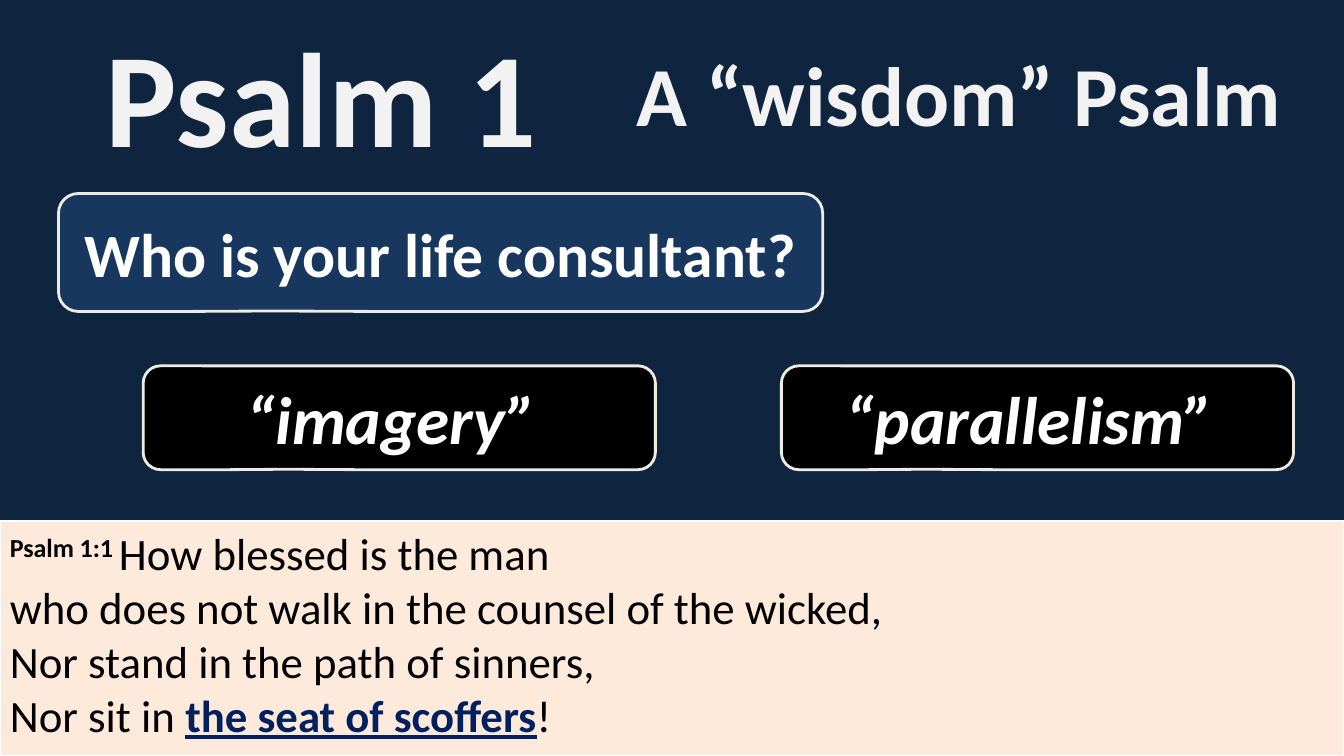
from pptx import Presentation
from pptx.dml.color import RGBColor
from pptx.enum.shapes import MSO_SHAPE as Shape
from pptx.enum.text import MSO_ANCHOR as Anchor, PP_ALIGN as Align
from pptx.util import Inches, Pt

NAVY = RGBColor(0x0F, 0x24, 0x3E)
BLUE = RGBColor(0x17, 0x37, 0x5E)
INK = RGBColor(0x00, 0x20, 0x60)
BLACK = RGBColor(0, 0, 0)
WHITE = RGBColor(0xFF, 0xFF, 0xFF)
PALE = RGBColor(0xF2, 0xF2, 0xF2)
CREAM = RGBColor(0xEE, 0xEC, 0xE1)
PEACH = RGBColor(0xFD, 0xEA, 0xDA)

# text, size, left, width
HEADS = [
    ("Psalm 1 ", 96, 0, 6.67),
    ("A “wisdom” Psalm", 60, 5.72, 7.58),
]
# text, size, italic, fill, box
CALLS = [
    ("Who is your life consultant?", 44, False, BLUE, (0.58, 1.92, 7.58, 1.17)),
    ("“parallelism” ", 48, True, BLACK, (7.75, 3.63, 5.08, 1.03)),
    ("“imagery” ", 48, True, BLACK, (1.42, 3.63, 5.08, 1.03)),
]
TAIL = (-0.219, 0.496, 0.167)
# paragraphs of lines of (text, style)
VERSE = [
    [[("Psalm 1:1 ", "ref"), ("How blessed is the man", "")]],
    [
        [("who does not walk in the counsel of the wicked,", "")],
        [("Nor stand in the path of sinners,", "")],
        [("Nor sit in ", ""), ("the seat of scoffers", "key"), ("!", "")],
    ],
]


def add_run(para, text, size, color, bold=False, italic=False):
    run = para.add_run()
    run.text = text
    font = run.font
    font.name, font.size, font.color.rgb = "Calibri", Pt(size), color
    font.bold, font.italic = bold, italic
    return run


def center(shape, text, size, color, italic=False):
    """Put one bold line in the middle of the shape."""
    frame = shape.text_frame
    frame.word_wrap = True
    frame.vertical_anchor = Anchor.MIDDLE
    para = frame.paragraphs[0]
    para.alignment = Align.CENTER
    add_run(para, text, size, color, True, italic)


def add_box(slide, kind, box, fill, line, width):
    shape = slide.shapes.add_shape(kind, *map(Inches, box))
    shape.shadow.inherit = False
    shape.fill.solid()
    shape.fill.fore_color.rgb = fill
    shape.line.color.rgb = line
    shape.line.width = Pt(width)
    return shape


def add_verse(slide):
    panel = add_box(slide, Shape.RECTANGLE, (0, 5.17, 13.33, 2.33), PEACH, WHITE, 1.5)
    frame = panel.text_frame
    frame.word_wrap = True
    frame.vertical_anchor = Anchor.TOP
    for i, lines in enumerate(VERSE):
        para = frame.add_paragraph() if i else frame.paragraphs[0]
        para.alignment = Align.LEFT
        for j, line in enumerate(lines):
            if j:
                para.add_line_break()
            for text, style in line:
                color = INK if style == "key" else BLACK
                run = add_run(para, text, 32, color, bold=bool(style))
                if style == "key":
                    run.font.underline = True
                elif style == "ref":
                    run._r.get_or_add_rPr().set("baseline", "30000")


def main():
    deck = Presentation()
    deck.slide_width, deck.slide_height = Inches(13.33), Inches(7.5)
    slide = deck.slides.add_slide(deck.slide_layouts[6])
    back = slide.background.fill
    back.solid()
    back.fore_color.rgb = NAVY

    for text, size, left, width in HEADS:
        box = slide.shapes.add_textbox(*map(Inches, (left, 0.3, width, 1.25)))
        center(box, text, size, PALE)
    for text, size, italic, fill, box in CALLS:
        call = add_box(slide, Shape.ROUNDED_RECTANGULAR_CALLOUT, box, fill, CREAM, 2)
        for i, value in enumerate(TAIL):
            call.adjustments[i] = value
        center(call, text, size, WHITE, italic)
    add_verse(slide)
    deck.save("out.pptx")


if __name__ == "__main__":
    main()
